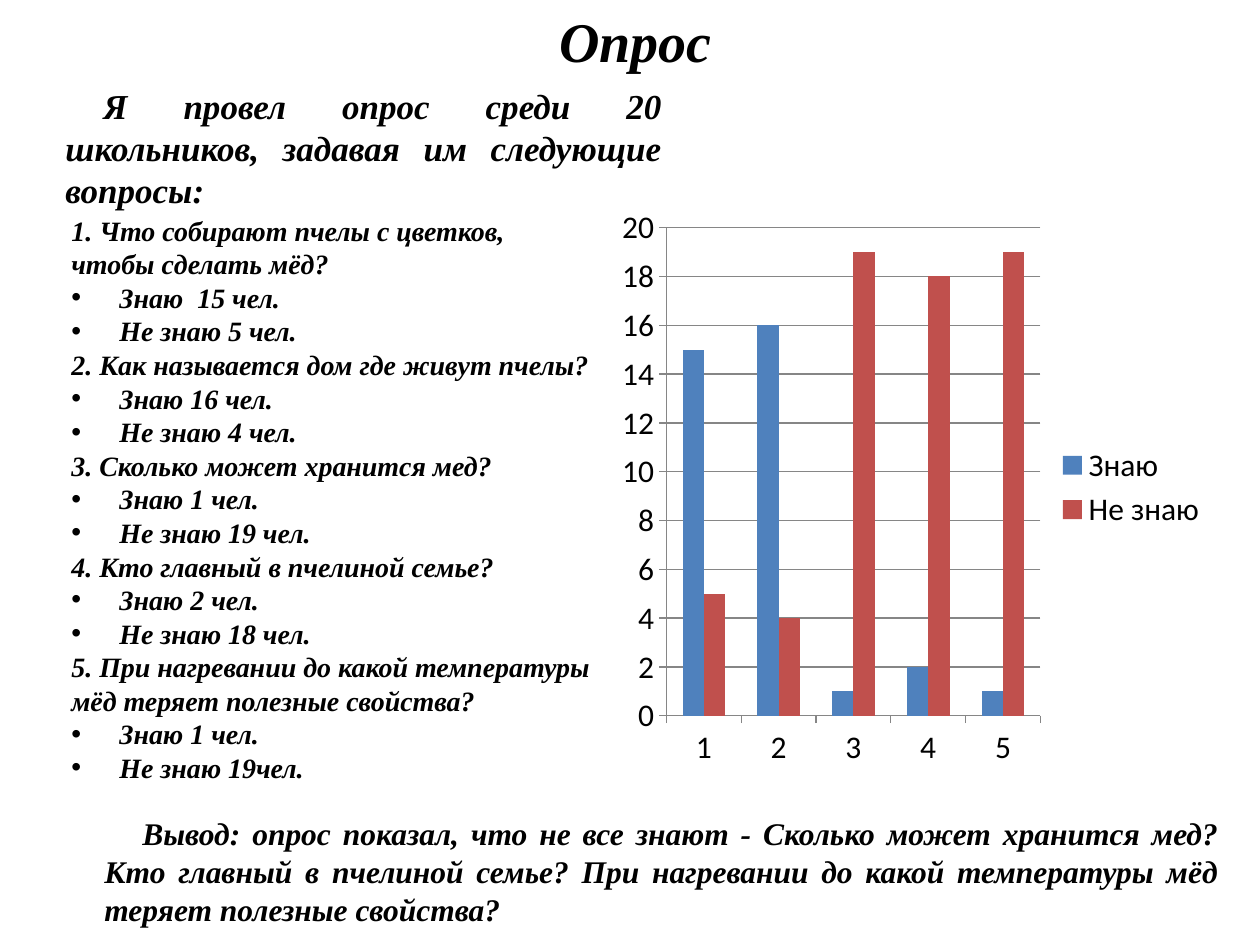
from lxml import etree
from pptx import Presentation
from pptx.chart.data import CategoryChartData
from pptx.dml.color import RGBColor
from pptx.enum.chart import XL_CHART_TYPE, XL_LEGEND_POSITION, XL_TICK_MARK
from pptx.enum.text import MSO_AUTO_SIZE, PP_ALIGN
from pptx.oxml.ns import qn
from pptx.util import Emu, Pt

COLUMNS = XL_CHART_TYPE.COLUMN_CLUSTERED
LEGEND_RIGHT = XL_LEGEND_POSITION.RIGHT
TICK_OUTSIDE = XL_TICK_MARK.OUTSIDE
GROW = MSO_AUTO_SIZE.SHAPE_TO_FIT_TEXT
LEFT, CENTER, JUSTIFY = PP_ALIGN.LEFT, PP_ALIGN.CENTER, PP_ALIGN.JUSTIFY

EMU_PER_PX = 914400 / 126
BLACK, GRID = "000000", "868686"

INTRO = "Я провел опрос среди 20 школьников, задавая им следующие вопросы:"
CONCLUSION = (
    "Вывод: опрос показал, что не все знают - Сколько может хранится мед? "
    "Кто главный в пчелиной семье? При нагревании до какой температуры мёд "
    "теряет полезные свойства?"
)
SURVEY = [
    ("1. Что собирают пчелы с цветков, чтобы сделать мёд?", "Знаю  15 чел.", "Не знаю 5 чел."),
    ("2. Как называется дом где живут пчелы?", "Знаю 16 чел.", "Не знаю 4 чел."),
    ("3. Сколько может хранится мед?", "Знаю 1 чел.", "Не знаю 19 чел."),
    ("4. Кто главный в пчелиной семье?", "Знаю 2 чел.", "Не знаю 18 чел."),
    ("5. При нагревании до какой температуры мёд теряет полезные свойства?",
     "Знаю 1 чел.", "Не знаю 19чел."),
]
ANSWERS = [
    ("Знаю", (15, 16, 1, 2, 1), "4F81BD"),
    ("Не знаю", (5, 4, 19, 18, 19), "C0504D"),
]


def px(length):
    """Turn pixels into EMU."""
    return Emu(round(length * EMU_PER_PX))


def color(value):
    """Turn a hex string into a colour."""
    return RGBColor.from_string(value)


def set_font(font, name, size):
    """Give a font its name, size and black colour."""
    font.name = name
    font.size = Pt(size)
    font.color.rgb = color(BLACK)


def add_text_box(page, left, top, width, height):
    """Add an empty wrapping text box and return its text frame."""
    frame = page.shapes.add_textbox(px(left), px(top), px(width), px(height)).text_frame
    frame.word_wrap = True
    frame.auto_size = GROW
    return frame


def write(para, text, size, align=LEFT, margin=0, indent=0):
    """Write a bold italic paragraph with its indents."""
    para.text = text
    para.alignment = align
    set_font(para.font, "Times New Roman", size)
    para.font.bold = para.font.italic = True
    properties = para._p.get_or_add_pPr()
    properties.set("marL", str(px(margin)))
    properties.set("indent", str(px(indent)))


def add_bullet(para):
    """Put a round bullet before a paragraph."""
    properties = para._p.get_or_add_pPr()
    bullet_font = etree.Element(qn("a:buFont"), typeface="Arial")
    bullet = etree.Element(qn("a:buChar"), char="•")
    properties.insert_element_before(bullet_font, "a:tabLst", "a:defRPr", "a:extLst")
    properties.insert_element_before(bullet, "a:tabLst", "a:defRPr", "a:extLst")


def add_survey(page):
    """List the questions with their bulleted answers."""
    frame = add_text_box(page, 59, 207, 544, 624)
    para = frame.paragraphs[0]
    for number, (question, *answers) in enumerate(SURVEY):
        if number:
            para = frame.add_paragraph()
        write(para, question, 16)
        for answer in answers:
            para = frame.add_paragraph()
            write(para, answer, 16, margin=48, indent=-48)
            add_bullet(para)


def add_answer_chart(page):
    """Add the column chart of answers by question."""
    data = CategoryChartData()
    data.categories = [str(number + 1) for number in range(len(SURVEY))]
    for name, values, _ in ANSWERS:
        data.add_series(name, values)
    chart = page.shapes.add_chart(COLUMNS, px(610), px(197), px(610), px(581), data).chart
    set_font(chart.font, "Calibri", 18)
    chart.has_title = False
    chart.has_legend = True
    chart.legend.position = LEGEND_RIGHT
    chart.legend.include_in_layout = False

    plot = chart.plots[0]
    plot.gap_width = 150
    plot.overlap = 0
    plot.vary_by_categories = False
    for series, (_, _, fill) in zip(plot.series, ANSWERS):
        series.format.fill.solid()
        series.format.fill.fore_color.rgb = color(fill)

    value_axis = chart.value_axis
    value_axis.minimum_scale, value_axis.maximum_scale = 0, 20
    value_axis.major_unit = 2
    value_axis.has_major_gridlines = True
    for axis in (chart.category_axis, value_axis):
        axis.major_tick_mark = TICK_OUTSIDE
    for lined in (chart.category_axis, value_axis, value_axis.major_gridlines):
        lined.format.line.color.rgb = color(GRID)
        lined.format.line.width = Pt(0.75)


def main():
    """Build the survey slide."""
    deck = Presentation()
    deck.slide_width, deck.slide_height = px(1260), px(945)
    page = deck.slides.add_slide(deck.slide_layouts[6])
    title = add_text_box(page, 49, 0, 1173, 81)
    write(title.paragraphs[0], "Опрос", 32, CENTER)
    intro = add_text_box(page, 29, 78, 645, 140)
    write(intro.paragraphs[0], INTRO, 20, JUSTIFY, 24, 38)
    add_survey(page)
    conclusion = add_text_box(page, 68, 808, 1163, 127)
    write(conclusion.paragraphs[0], CONCLUSION, 18, JUSTIFY, 24, 38)
    add_answer_chart(page)
    deck.save("out.pptx")


if __name__ == "__main__":
    main()
